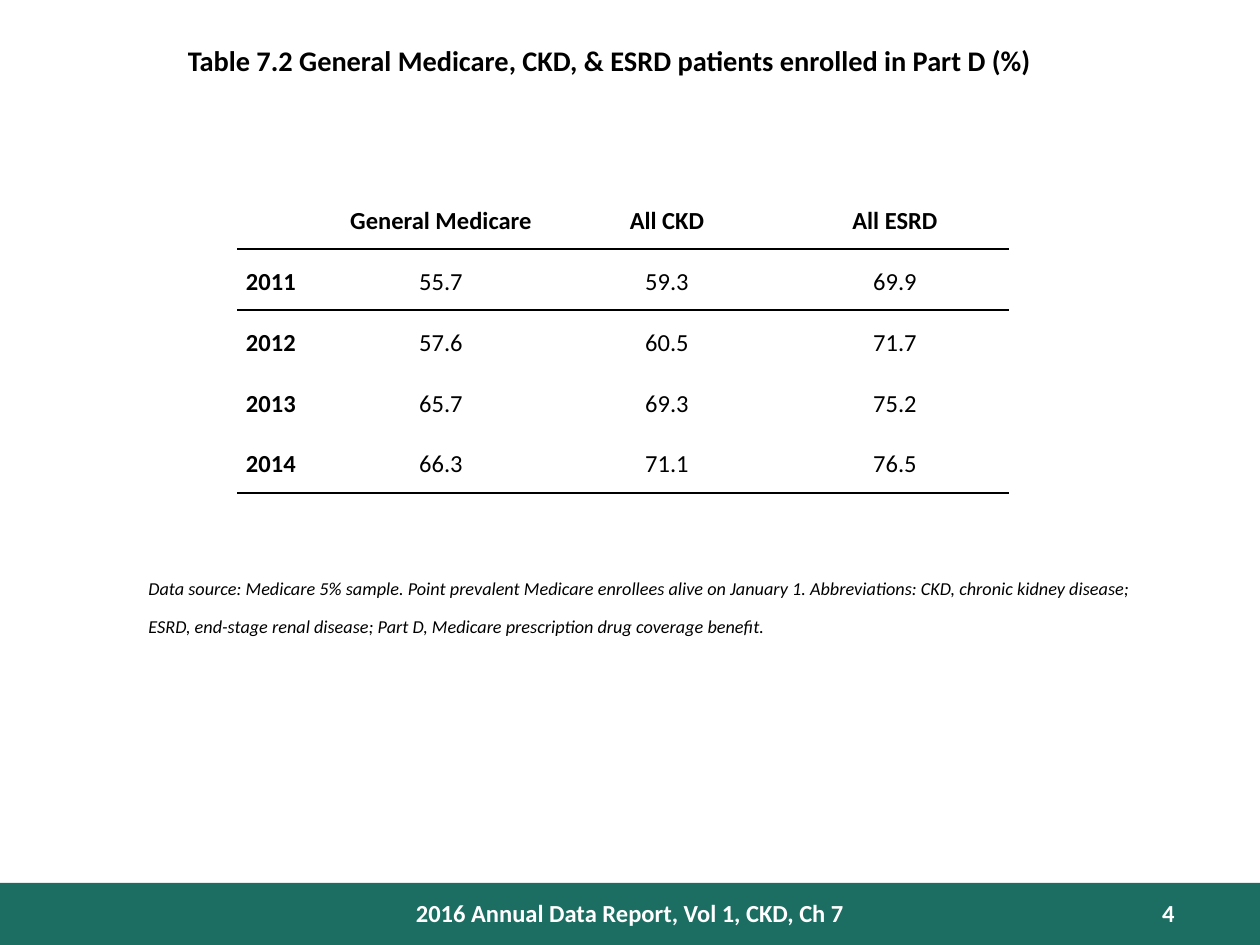
import pptx
import pptx.dml.color
import pptx.enum.shapes
import pptx.enum.text
import pptx.oxml
import pptx.oxml.ns
import pptx.util

PX = 914400 // 126
BLACK = pptx.dml.color.RGBColor(0, 0, 0)
WHITE = pptx.dml.color.RGBColor(255, 255, 255)
GREEN = pptx.dml.color.RGBColor(0x1C, 0x6E, 0x62)
ALIGN = pptx.enum.text.PP_ALIGN
NO_STYLE = "{2D5ABB26-0587-4C30-8999-92F81FD0307C}"


def write(tf, text, size, color, align, bold=False, italic=False):
    p = tf.paragraphs[0]
    p.alignment = align
    p.font.name = "Calibri"
    p.font.size = pptx.util.Pt(size)
    p.font.color.rgb = color
    p.font.bold = bold
    p.font.italic = italic
    r = p.add_run()
    r.text = text
    return p


def add_border(cell, side):
    cell._tc.get_or_add_tcPr().append(pptx.oxml.parse_xml(
        f'<a:{side} {pptx.oxml.ns.nsdecls("a")} w="12700"><a:solidFill>'
        f'<a:srgbClr val="{BLACK}"/></a:solidFill></a:{side}>'))


prs = pptx.Presentation()
prs.slide_width = pptx.util.Inches(10)
prs.slide_height = pptx.util.Inches(7.5)
s = prs.slides.add_slide(prs.slide_layouts[6])

sp = s.shapes.add_shape(pptx.enum.shapes.MSO_SHAPE.RECTANGLE,
                        0, 883 * PX, prs.slide_width, 62 * PX)
sp.shadow.inherit = False
sp.fill.solid()
sp.fill.fore_color.rgb = GREEN
sp.line.fill.background()

title = "Table 7.2 General Medicare, CKD, & ESRD patients enrolled in Part D (%)"
note = ("Data source: Medicare 5% sample. Point prevalent Medicare enrollees alive "
        "on January 1. Abbreviations: CKD, chronic kidney disease; ESRD, end-stage "
        "renal disease; Part D, Medicare prescription drug coverage benefit.")
footer = "2016 Annual Data Report, Vol 1, CKD, Ch 7"

boxes = [
    (98, 31, 1022, 53, title, 28, BLACK, ALIGN.CENTER, True, False, True),
    (136, 567, 1018, 63, note, 18, BLACK, ALIGN.LEFT, False, True, True),
    (378, 892, 504, 42, footer, 14, WHITE, ALIGN.CENTER, True, False, False),
    (1061, 892, 126, 38, "4", 14, WHITE, ALIGN.RIGHT, True, False, False),
]
for x, y, w, h, text, size, color, align, bold, italic, raised in boxes:
    tf = s.shapes.add_textbox(x * PX, y * PX, w * PX, h * PX).text_frame
    tf.word_wrap = True
    p = write(tf, text, size, color, align, bold, italic)
    if raised:
        p.runs[0]._r.get_or_add_rPr().set("baseline", "30000")

rows = [
    ("", "General Medicare", "All CKD", "All ESRD"),
    ("2011", "55.7", "59.3", "69.9"),
    ("2012", "57.6", "60.5", "71.7"),
    ("2013", "65.7", "69.3", "75.2"),
    ("2014", "66.3", "71.1", "76.5"),
]
widths = [92, 224, 228, 228]
row_height = 61
table = s.shapes.add_table(len(rows), len(widths), 237 * PX, 188 * PX,
                           sum(widths) * PX, len(rows) * row_height * PX).table
table.first_row = False
table.horz_banding = False
table._tbl.tblPr.find(pptx.oxml.ns.qn("a:tableStyleId")).text = NO_STYLE
for column, width in zip(table.columns, widths):
    column.width = width * PX
for i, values in enumerate(rows):
    table.rows[i].height = row_height * PX
    for j, value in enumerate(values):
        cell = table.cell(i, j)
        cell.margin_left = cell.margin_right = 9 * PX
        cell.margin_top = cell.margin_bottom = 0
        cell.vertical_anchor = pptx.enum.text.MSO_ANCHOR.MIDDLE
        if i == 1:
            add_border(cell, "lnT")
        if i in (0, len(rows) - 1):
            add_border(cell, "lnB")
        cell.fill.background()
        if value:
            p = write(cell.text_frame, value, 14, BLACK,
                      ALIGN.CENTER if j else ALIGN.LEFT, bold=i == 0 or j == 0)
            p.line_spacing = 1.15

prs.save("out.pptx")
